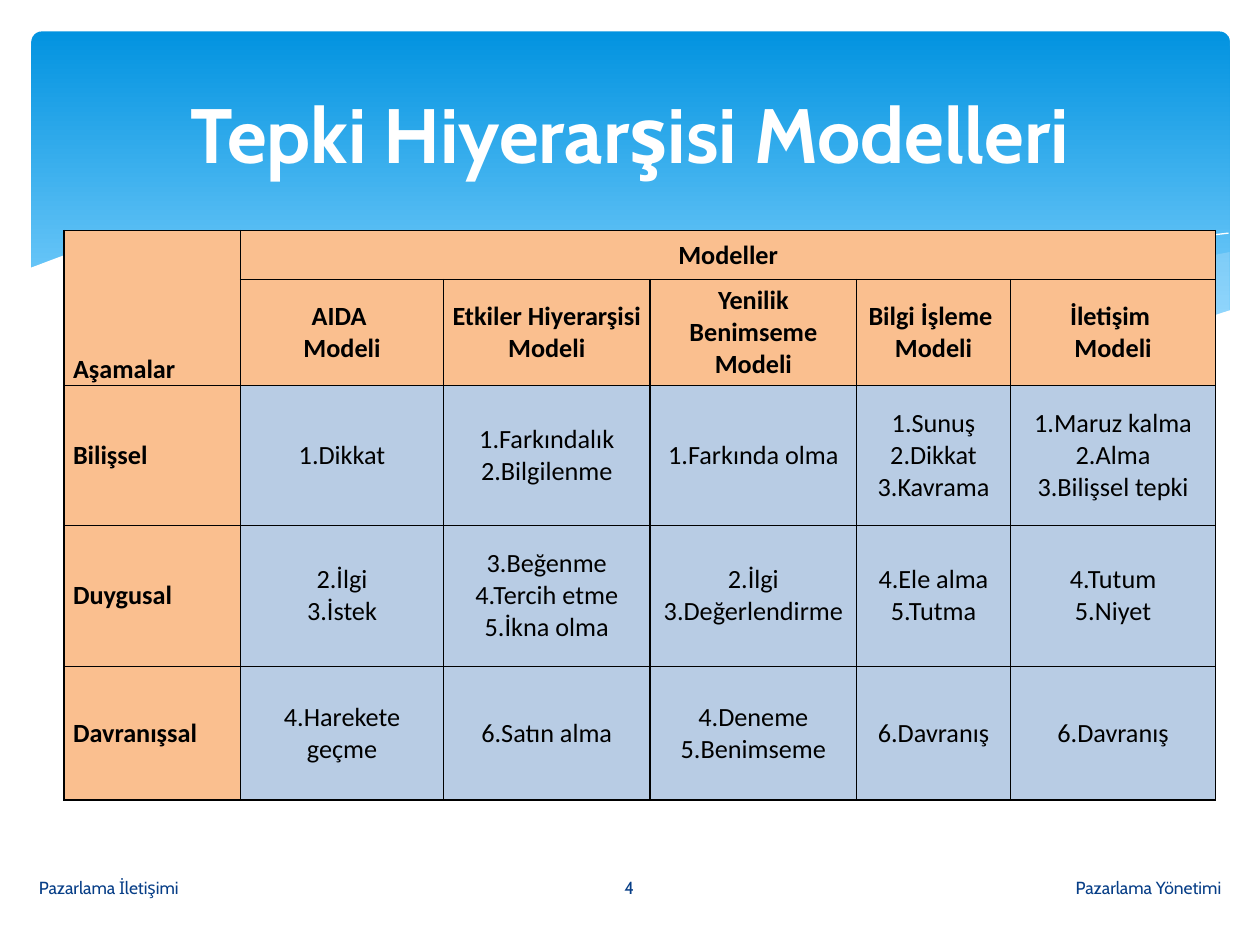
import dataclasses
import typing

import pptx
import pptx.dml.color
import pptx.enum.shapes
import pptx.enum.text
import pptx.oxml
import pptx.oxml.ns
import pptx.util

Inches = pptx.util.Inches
Align = pptx.enum.text.PP_ALIGN
Anchor = pptx.enum.text.MSO_ANCHOR
Point = tuple[float, float]

COLORS = {
    "white": "FFFFFF", "black": "000000", "sky_top": "0293E0", "sky_bottom": "83D3FE",
    "wave": "C6E7FC", "footer": "073E87", "heading": "FABF8F", "body": "B8CCE4",
}
CURVE_STEPS = 6


@dataclasses.dataclass
class Wave:
    """Edges joined end to end, each a smooth curve through its knots."""
    edges: list[list[Point]]
    fill: typing.Optional[str] = None
    opacity: int = 100  # percent


@dataclasses.dataclass
class Footer:
    text: str
    left: float
    width: float
    align: Align


WAVES = [
    Wave([[(9.76, 2), (8.61, 2.23), (6.61, 2.65)],
          [(6.61, 2.65), (8.1, 2.78), (9.05, 2.69), (9.76, 2.47)]], "wave", 29),
    Wave([[(8.93, 2.73), (7.75, 2.54), (6.29, 2.22), (4.89, 1.94), (3.8, 1.85), (2.86, 1.91)],
          [(2.86, 1.91), (4.49, 2.22), (6.34, 2.61), (7.61, 2.77), (8.93, 2.73)]], "wave", 40),
    Wave([[(3.09, 1.95), (4.16, 1.87), (5.56, 1.97), (7.27, 2.26), (9.07, 2.72)]]),
    Wave([[(6.13, 2.57), (7.48, 2.23), (8.66, 1.99), (9.75, 1.85)]]),
    Wave([[(9.77, 2.46), (8.99, 2.69), (8.09, 2.77), (6.48, 2.62), (4.47, 2.2), (2.92, 1.9),
           (1.77, 1.84), (0.85, 1.93), (0.23, 2.13)],
          [(0.23, 3.29), (9.77, 3.29)]], "white"),
]

FOOTERS = [
    Footer("Pazarlama Yönetimi", 5.65, 4.14, Align.RIGHT),
    Footer("Pazarlama İletişimi", 0.21, 4.14, Align.LEFT),
    Footer("4", 4.36, 1.27, Align.CENTER),
]

COLUMN_WIDTHS = [1.4, 1.61, 1.64, 1.64, 1.22, 1.63]
ROW_HEIGHTS = [0.39, 0.84, 1.11, 1.12, 1.06]
ROWS = [
    ["Aşamalar", "Modeller", "", "", "", ""],
    ["", "AIDA \nModeli", "Etkiler Hiyerarşisi\nModeli", "Yenilik Benimseme\nModeli",
     "Bilgi İşleme \nModeli", "İletişim \nModeli"],
    ["Bilişsel", "1.Dikkat", "1.Farkındalık\n2.Bilgilenme", "1.Farkında olma",
     "1.Sunuş\n2.Dikkat\n3.Kavrama", "1.Maruz kalma\n2.Alma\n3.Bilişsel tepki"],
    ["Duygusal", "2.İlgi\n3.İstek", "3.Beğenme\n4.Tercih etme\n5.İkna olma",
     "2.İlgi\n3.Değerlendirme", "4.Ele alma\n5.Tutma", "4.Tutum\n5.Niyet"],
    ["Davranışsal", "4.Harekete geçme", "6.Satın alma", "4.Deneme\n5.Benimseme",
     "6.Davranış", "6.Davranış"],
]


def rgb(name: str) -> pptx.dml.color.RGBColor:
    return pptx.dml.color.RGBColor.from_string(COLORS[name])


def write(frame, text: str, align: Align, color: str, **formats) -> None:
    """Fill a text frame, one paragraph per line of text."""
    frame.text = text
    for para in frame.paragraphs:
        para.alignment = align
        for span in para.runs:
            span.font.color.rgb = rgb(color)
            for name, value in formats.items():
                setattr(span.font, name, value)


def smooth_curve(knots: list[Point]) -> list[Point]:
    """Sample a Catmull-Rom spline through the knots."""
    padded = [knots[0], *knots, knots[-1]]
    points = [knots[0]]
    for a, b, c, d in zip(padded, padded[1:], padded[2:], padded[3:]):
        for step in range(1, CURVE_STEPS + 1):
            t = step / CURVE_STEPS
            points.append(tuple(
                q + t / 2 * (r - p + t * (2 * p - 5 * q + 4 * r - s + t * (3 * (q - r) + s - p)))
                for p, q, r, s in zip(a, b, c, d)))
    return points


def draw_sky(page) -> None:
    box = page.shapes.add_shape(pptx.enum.shapes.MSO_SHAPE.ROUNDED_RECTANGLE,
                                Inches(0.25), Inches(0.25), Inches(9.51), Inches(2.7))
    box.adjustments[0] = 0.03
    box.shadow.inherit = False
    box.line.fill.background()
    box.fill.gradient()
    box.fill.gradient_angle = 270
    for stop, color, position in zip(box.fill.gradient_stops, ("sky_top", "sky_bottom"), (0, 0.9)):
        stop.color.rgb = rgb(color)
        stop.position = position


def draw_wave(page, wave: Wave) -> None:
    """Draw a filled wave, or a white hairline if it has no fill."""
    start, *rest = [(Inches(x), Inches(y)) for edge in wave.edges for x, y in smooth_curve(edge)]
    builder = page.shapes.build_freeform(*start)
    builder.add_line_segments(rest, close=wave.fill is not None)
    shape = builder.convert_to_shape()
    shape.shadow.inherit = False
    if wave.fill is None:
        shape.fill.background()
        shape.line.color.rgb = rgb("white")
        shape.line.width = pptx.util.Pt(0)
        return
    shape.line.fill.background()
    shape.fill.solid()
    shape.fill.fore_color.rgb = rgb(wave.fill)
    if wave.opacity < 100:
        color = shape._element.spPr.find(".//" + pptx.oxml.ns.qn("a:srgbClr"))
        color.append(pptx.oxml.parse_xml(
            f'<a:alpha {pptx.oxml.ns.nsdecls("a")} val="{wave.opacity * 1000}"/>'))


def draw_footer(page, footer: Footer) -> None:
    box = page.shapes.add_textbox(Inches(footer.left), Inches(6.84),
                                  Inches(footer.width), Inches(0.4))
    box.text_frame.word_wrap = True
    box.text_frame.vertical_anchor = Anchor.MIDDLE
    write(box.text_frame, footer.text, footer.align, "footer", name="Cabin", size=pptx.util.Pt(10))


def add_borders(cell) -> None:
    for side in ("lnL", "lnR", "lnT", "lnB"):
        cell._tc.get_or_add_tcPr().append(pptx.oxml.parse_xml(
            f'<a:{side} {pptx.oxml.ns.nsdecls("a")} w="12700"><a:solidFill>'
            f'<a:srgbClr val="{COLORS["black"]}"/></a:solidFill></a:{side}>'))


def draw_table(page) -> None:
    table = page.shapes.add_table(len(ROWS), len(COLUMN_WIDTHS), Inches(0.51), Inches(1.83),
                                  Inches(sum(COLUMN_WIDTHS)), Inches(sum(ROW_HEIGHTS))).table
    table.first_row = table.horz_banding = False
    for column, width in zip(table.columns, COLUMN_WIDTHS):
        column.width = Inches(width)
    for row, height in zip(table.rows, ROW_HEIGHTS):
        row.height = Inches(height)
    layout = {"margin_left": Inches(0.07), "margin_right": Inches(0.07), "margin_top": 0,
              "margin_bottom": 0, "vertical_anchor": Anchor.MIDDLE}
    for row, texts in enumerate(ROWS):
        for column, text in enumerate(texts):
            cell = table.cell(row, column)
            heading = row < 2 or column == 0
            for name, value in layout.items():
                setattr(cell, name, value)
            add_borders(cell)
            cell.fill.solid()
            cell.fill.fore_color.rgb = rgb("heading" if heading else "body")
            write(cell.text_frame, text, Align.CENTER if column else Align.LEFT, "black",
                  name="Calibri", size=pptx.util.Pt(15), bold=heading)
    corner = table.cell(0, 0)
    corner.vertical_anchor = Anchor.BOTTOM
    corner.text_frame.paragraphs[0].alignment = Align.JUSTIFY
    corner.merge(table.cell(1, 0))
    table.cell(0, 1).merge(table.cell(0, 5))


def place_title(page) -> None:
    title = page.shapes.title
    place = {"left": 0.5, "top": 0.37, "width": 9, "height": 1.37}
    for name, value in place.items():
        setattr(title, name, Inches(value))
    title.text_frame.vertical_anchor = Anchor.MIDDLE
    write(title.text_frame, "Tepki Hiyerarşisi Modelleri", Align.CENTER, "white",
          name="Cabin", size=pptx.util.Pt(44), bold=True)
    page.shapes._spTree.append(title._element)  # in front of the sky


def main() -> None:
    deck = pptx.Presentation()
    deck.slide_width, deck.slide_height = Inches(10), Inches(7.5)
    page = deck.slides.add_slide(deck.slide_layouts.get_by_name("Title Only"))
    draw_sky(page)
    for wave in WAVES:
        draw_wave(page, wave)
    place_title(page)
    for footer in FOOTERS:
        draw_footer(page, footer)
    draw_table(page)
    deck.save("out.pptx")


if __name__ == "__main__":
    main()
